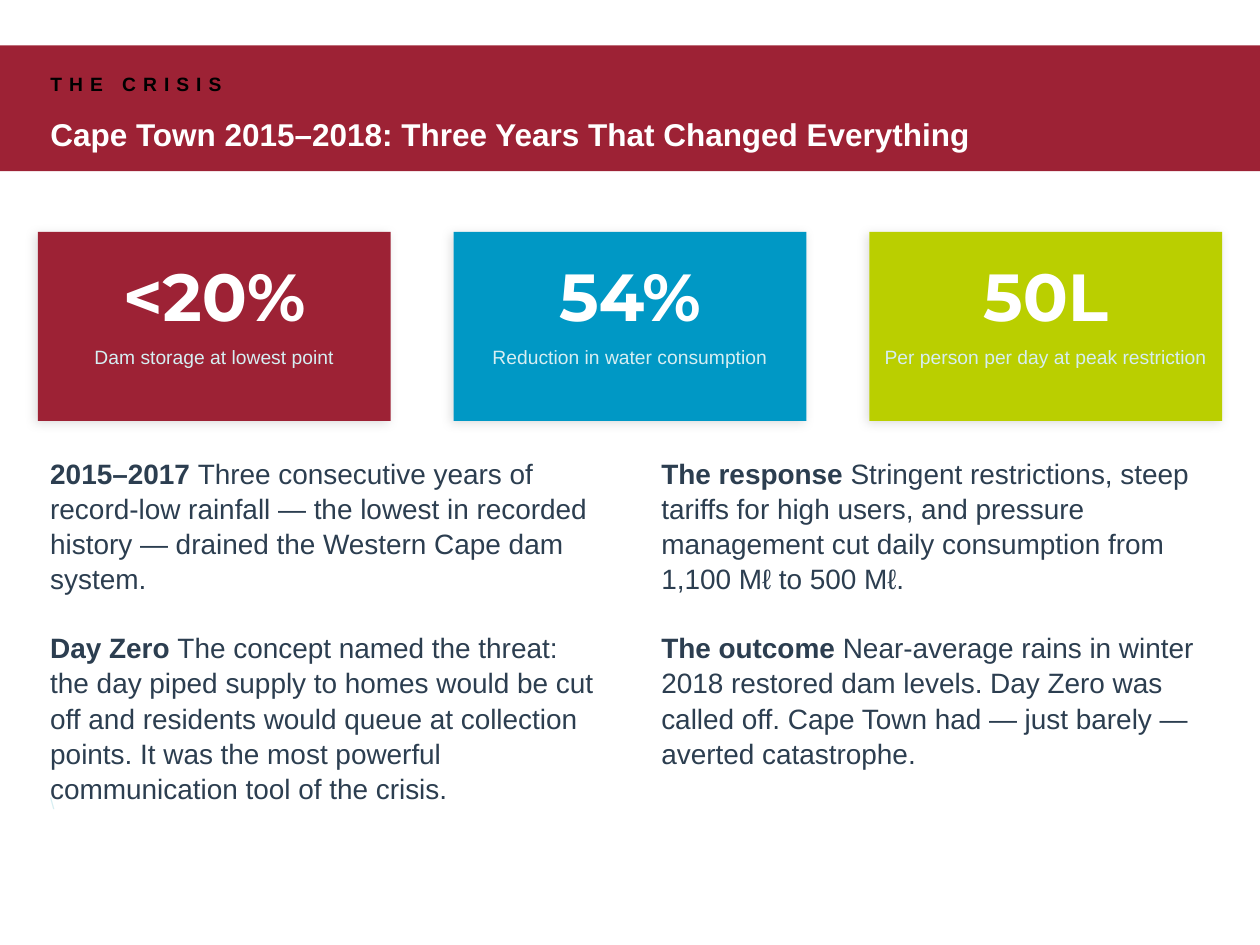
import pptx
import pptx.util
import pptx.dml.color
import pptx.enum.shapes
import pptx.enum.text
import pptx.oxml
from dataclasses import dataclass

ALIGN = pptx.enum.text.PP_ALIGN
ANCHOR = pptx.enum.text.MSO_ANCHOR
NS = 'xmlns:a="http://schemas.openxmlformats.org/drawingml/2006/main"'


@dataclass(frozen=True)
class Theme:
    red: str = "9D2235"
    blue: str = "0098C5"
    lime: str = "BACF00"
    white: str = "FFFFFF"
    black: str = "000000"
    ink: str = "2C3E50"
    pale: str = "D6EEF2"
    sans: str = "Arial"
    show: str = "Montserrat"
    big: int = 38
    title: int = 18
    body: int = 16
    label: int = 11
    note: int = 9


T = Theme()
WIDE, HIGH = 10, 7.5
EDGE = 0.3  # outer margin, in inches


def paint(run, size, color, bold=False, face=T.sans):
    run.font.size = pptx.util.Pt(size)
    run.font.name = face
    run.font.bold = bold
    run.font.color.rgb = pptx.dml.color.RGBColor.from_string(color)


def block(slide, box, color, shadow=False):
    shape = slide.shapes.add_shape(
        pptx.enum.shapes.MSO_SHAPE.RECTANGLE, *map(pptx.util.Inches, box))
    shape.shadow.inherit = False
    shape.fill.solid()
    shape.fill.fore_color.rgb = pptx.dml.color.RGBColor.from_string(color)
    shape.line.fill.background()
    if shadow:
        glow = pptx.oxml.parse_xml(
            f'<a:outerShdw {NS} blurRad="76200" dist="25400" dir="8100000" '
            'algn="bl" rotWithShape="0"><a:srgbClr val="000000">'
            '<a:alpha val="12000"/></a:srgbClr></a:outerShdw>')
        shape.element.spPr.find(pptx.oxml.ns.qn("a:effectLst")).append(glow)


def frame(slide, box, anchor=ANCHOR.MIDDLE, inset=True):
    text = slide.shapes.add_textbox(*map(pptx.util.Inches, box)).text_frame
    text.word_wrap = True
    text.vertical_anchor = anchor
    if not inset:
        text.margin_left = text.margin_right = 0
        text.margin_top = text.margin_bottom = 0
    return text


def line(text, words, size, color, bold=False, face=T.sans, align=ALIGN.LEFT):
    text.text = words
    para = text.paragraphs[0]
    para.alignment = align
    paint(para.runs[0], size, color, bold, face)
    return para.runs[0]


def header(slide, box, kicker, title):
    left, top, width, height = box
    block(slide, box, T.red)
    pad, row = 0.04 * width, 0.45 * height
    text = frame(slide, (left + pad, top + 0.08 * height, 0.3 * width, row),
                 inset=False)
    run = line(text, kicker, T.label, T.black, True)
    run.font._element.set("spc", "400")  # letter spacing
    text = frame(slide, (left + pad, top + 0.48 * height,
                         width - 2 * pad, row), inset=False)
    line(text, title, T.title, T.white, True)


def card(slide, box, color, value, label):
    left, top, width, height = box
    block(slide, box, color, shadow=True)
    text = frame(slide, (left, top + height / 15, width, height * 8 / 15),
                 inset=False)
    line(text, value, T.big, T.white, True, T.show, ALIGN.CENTER)
    text = frame(slide, (left, top + height * 0.6, width, height * 0.37),
                 ANCHOR.TOP, False)
    line(text, label, T.label, T.pale, align=ALIGN.CENTER)


def column(slide, box, items):
    text = frame(slide, box, ANCHOR.TOP)
    for index, (lead, words) in enumerate(items):
        para = text.add_paragraph() if index else text.paragraphs[0]
        para.line_spacing = 1.05
        if index:
            para.space_before = pptx.util.Pt(19.2)
        for part, bold in ((lead + " ", True), (words, False)):
            run = para.add_run()
            run.text = part
            paint(run, T.body, T.ink, bold)


def spread(box, count, gap):
    """Split a box into equal columns."""
    left, top, width, height = box
    each = (width - gap * (count - 1)) / count
    return [(left + i * (each + gap), top, each, height) for i in range(count)]


CARDS = [
    (T.red, "<20%", "Dam storage at lowest point"),
    (T.blue, "54%", "Reduction in water consumption"),
    (T.lime, "50L", "Per person per day at peak restriction"),
]
STORY = [
    [("2015–2017", "Three consecutive years of record-low rainfall — the lowest "
      "in recorded history — drained the Western Cape dam system."),
     ("Day Zero", "The concept named the threat: the day piped supply to homes "
      "would be cut off and residents would queue at collection points. It was "
      "the most powerful communication tool of the crisis.")],
    [("The response", "Stringent restrictions, steep tariffs for high users, and "
      "pressure management cut daily consumption from 1,100 Mℓ to 500 Mℓ."),
     ("The outcome", "Near-average rains in winter 2018 restored dam levels. Day "
      "Zero was called off. Cape Town had — just barely — averted catastrophe.")],
]


def main():
    deck = pptx.Presentation()
    deck.slide_width = pptx.util.Inches(WIDE)
    deck.slide_height = pptx.util.Inches(HIGH)
    slide = deck.slides.add_slide(deck.slide_layouts[6])
    inner = WIDE - 2 * EDGE

    # Title band
    header(slide, (0, 0.36, WIDE, 1), "THE CRISIS",
           "Cape Town 2015–2018: Three Years That Changed Everything")
    # Key figures
    for box, data in zip(spread((EDGE, 1.84, inner, 1.5), 3, 0.5), CARDS):
        card(slide, box, *data)
    # Story columns
    for box, items in zip(spread((EDGE, 3.56, inner, 2.1), 2, EDGE), STORY):
        column(slide, box, items)
    # Foot note
    line(frame(slide, (EDGE, 6.21, inner, 0.33)), "\\", T.note, T.pale)

    deck.save("out.pptx")


if __name__ == "__main__":
    main()
